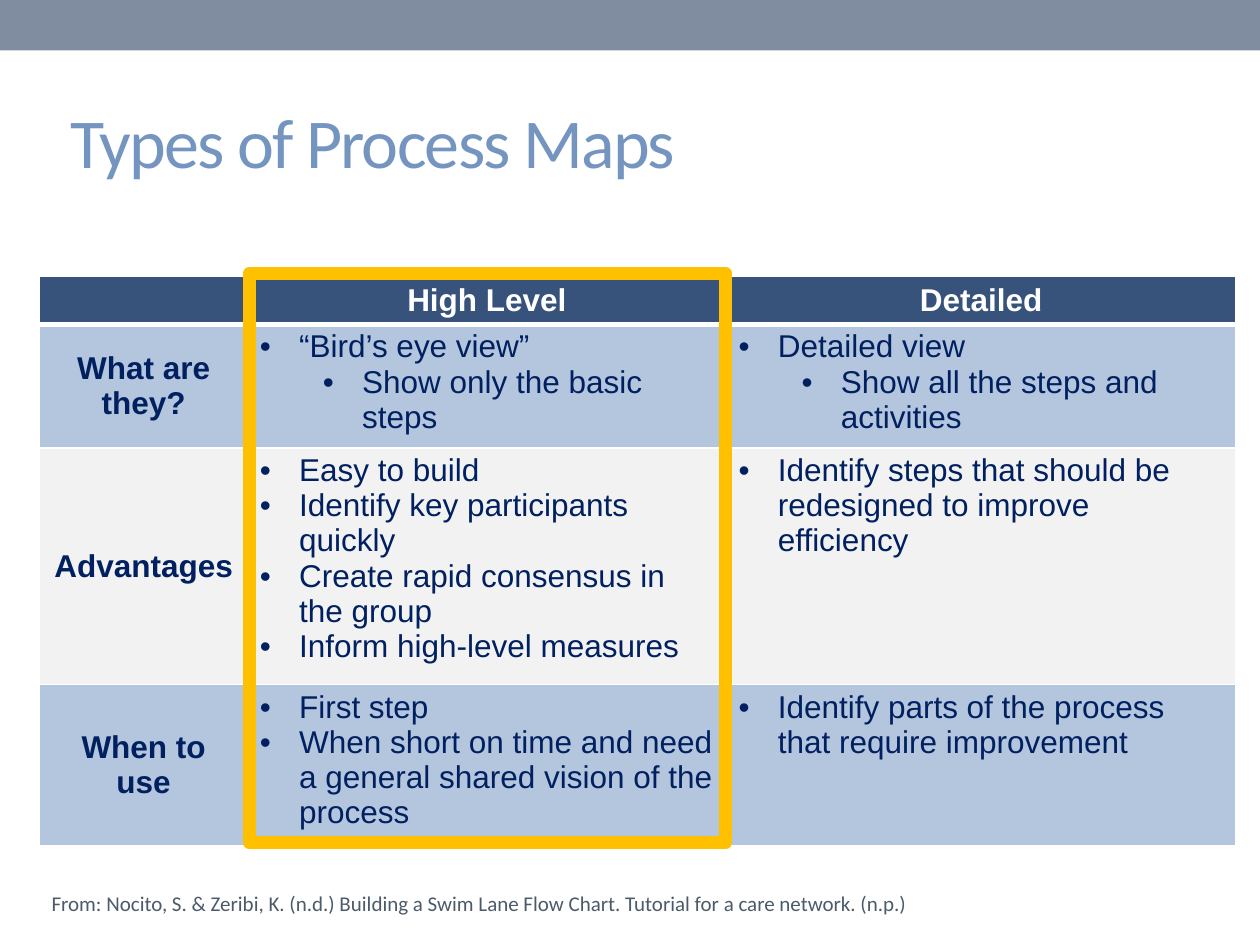
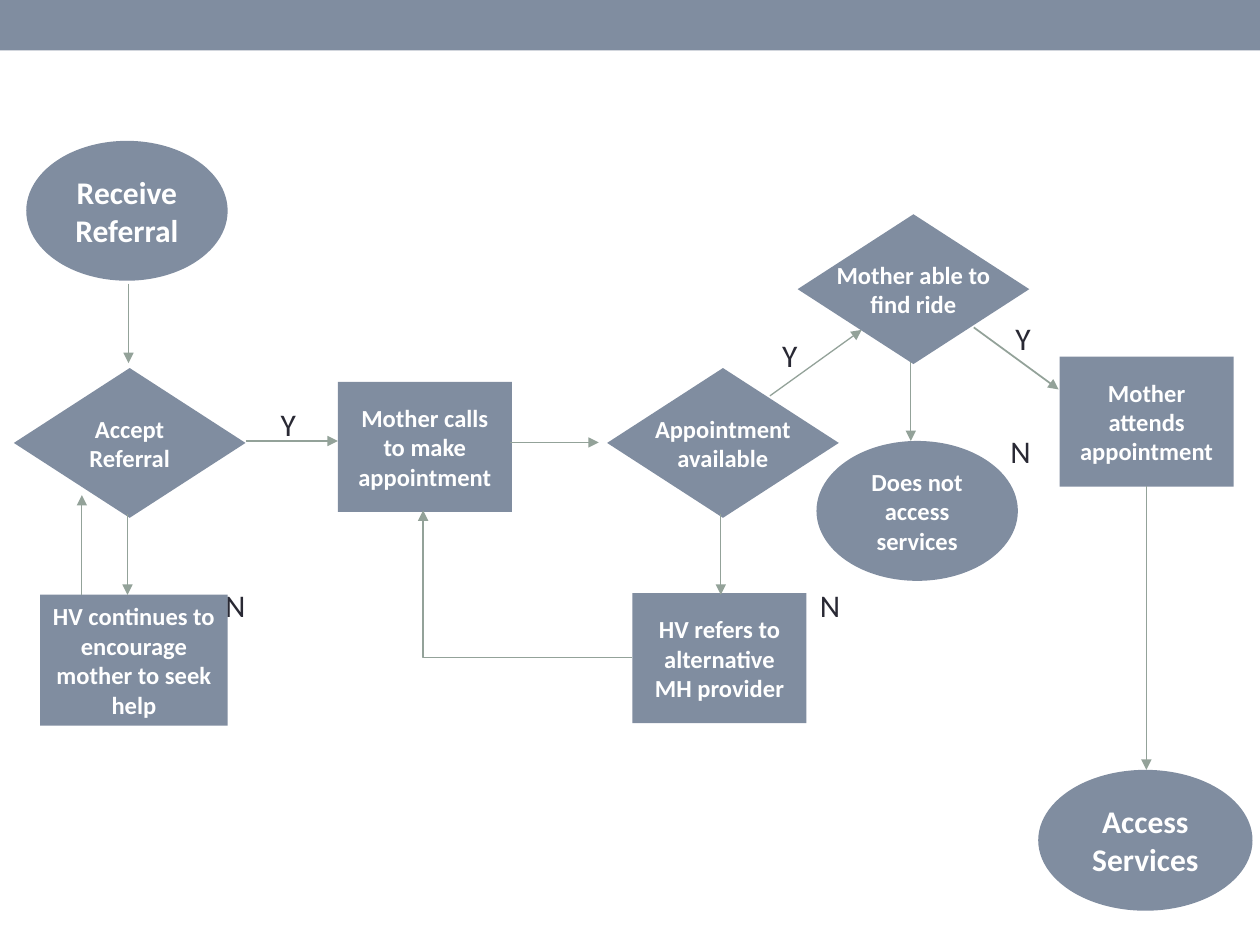
from dataclasses import dataclass

from lxml import etree
from pptx import Presentation
from pptx import util as u
from pptx.dml.color import RGBColor
from pptx.enum import shapes, text
from pptx.oxml import ns

# Shared style
SLATE, TITLE_BLUE, NAVY = "808DA0", "7595C1", "002060"
HEADER_BLUE, PALE_BLUE, PALE_GREY = "37537B", "B4C5DE", "F2F2F2"
WHITE, GOLD, ARROW_GREY, INK, CITATION_GREY = "FFFFFF", "FFC000", "93A299", "292934", "4C5A6A"
HEADING_FONT, TABLE_FONT = "Calibri", "Arial"
SLIDE_WIDTH, SLIDE_HEIGHT = 25.4, 19.05

RECTANGLE = shapes.MSO_SHAPE.RECTANGLE
OVAL = shapes.MSO_SHAPE.OVAL
DIAMOND = shapes.MSO_SHAPE.DIAMOND
SIZES = {RECTANGLE: (3.51, 2.62), OVAL: (4.06, 2.82), DIAMOND: (4.67, 3.02)}


@dataclass
class Style:
    size: float
    color: str
    font: str = HEADING_FONT
    bold: bool = False
    spacing: int = 0


@dataclass
class Node:
    kind: shapes.MSO_SHAPE
    left: float
    top: float
    words: str
    size: int = 14
    extent: tuple | None = None
    tight: bool = False


@dataclass
class Arrow:
    start: tuple
    end: tuple
    weight: float = 0.75
    bent: bool = False


@dataclass
class Label:
    words: str
    left: float
    top: float


@dataclass
class Row:
    heading: str
    high_level: list
    detailed: list
    height: float
    fill: str


def rgb(color: str) -> RGBColor:
    return RGBColor.from_string(color)


def lengths(*values: float) -> list:
    return [u.Cm(value) for value in values]


def add_run(paragraph, words: str, style: Style) -> None:
    run = paragraph.add_run()
    run.text = words
    run.font.size = u.Pt(style.size)
    run.font.name = style.font
    run.font.bold = style.bold
    run.font.color.rgb = rgb(style.color)
    if style.spacing:
        run.font._element.set("spc", str(style.spacing))


def add_text(slide, box: tuple, words: str, style: Style,
             anchor=text.MSO_ANCHOR.TOP) -> None:
    frame = slide.shapes.add_textbox(*lengths(*box)).text_frame
    frame.word_wrap = True
    frame.vertical_anchor = anchor
    add_run(frame.paragraphs[0], words, style)


def add_box(slide, kind, box: tuple, fill: str | None = None):
    shape = slide.shapes.add_shape(kind, *lengths(*box))
    shape.shadow.inherit = False
    shape.line.fill.background()
    if fill:
        shape.fill.solid()
        shape.fill.fore_color.rgb = rgb(fill)
    else:
        shape.fill.background()
    return shape


def add_slide(presentation):
    """Add a blank slide with the band across the top."""
    slide = presentation.slides.add_slide(presentation.slide_layouts[6])
    add_box(slide, RECTANGLE, (0, 0, SLIDE_WIDTH, 1.02), SLATE)
    return slide


def add_node(slide, node: Node) -> None:
    extent = node.extent or SIZES[node.kind]
    shape = add_box(slide, node.kind, (node.left, node.top, *extent), SLATE)
    frame = shape.text_frame
    frame.word_wrap = not node.tight
    frame.vertical_anchor = text.MSO_ANCHOR.MIDDLE
    if node.tight:
        frame.margin_left = frame.margin_right = frame.margin_top = frame.margin_bottom = 0
    for index, line in enumerate(node.words.split("\n")):
        paragraph = frame.add_paragraph() if index else frame.paragraphs[0]
        paragraph.alignment = text.PP_ALIGN.CENTER
        add_run(paragraph, line, Style(node.size, WHITE, bold=True))


def add_arrow(slide, arrow: Arrow) -> None:
    kind = shapes.MSO_CONNECTOR.ELBOW if arrow.bent else shapes.MSO_CONNECTOR.STRAIGHT
    # A bent arrow is laid out from its end and then turned half round
    first, last = (arrow.end, arrow.start) if arrow.bent else (arrow.start, arrow.end)
    connector = slide.shapes.add_connector(kind, *lengths(*first, *last))
    connector.line.color.rgb = rgb(ARROW_GREY)
    connector.line.width = u.Pt(arrow.weight)
    properties = connector._element.spPr
    if arrow.bent:
        properties.find(ns.qn("a:xfrm")).set("rot", "10800000")
        properties.find(ns.qn("a:prstGeom")).set("prst", "bentConnector2")
    line = properties.find(ns.qn("a:ln"))
    etree.SubElement(line, ns.qn("a:tailEnd")).set("type", "triangle")
    etree.SubElement(properties, ns.qn("a:effectLst"))


# Table parts
def set_borders(cell, bottom_weight: float) -> None:
    properties = cell._tc.get_or_add_tcPr()
    for index, side in enumerate(("lnL", "lnR", "lnT", "lnB")):
        weight = bottom_weight if side == "lnB" else 1
        line = etree.Element(ns.qn(f"a:{side}"), w=str(u.Pt(weight)))
        fill = etree.SubElement(line, ns.qn("a:solidFill"))
        etree.SubElement(fill, ns.qn("a:srgbClr")).set("val", WHITE)
        properties.insert(index, line)


def style_cell(cell, fill: str, bottom_weight: float = 1) -> None:
    cell.margin_left = cell.margin_right = u.Cm(0.25)
    cell.margin_top = cell.margin_bottom = u.Cm(0.1)
    cell.fill.solid()
    cell.fill.fore_color.rgb = rgb(fill)
    set_borders(cell, bottom_weight)


def write_heading(cell, words: str, color: str) -> None:
    cell.vertical_anchor = text.MSO_ANCHOR.MIDDLE
    paragraph = cell.text_frame.paragraphs[0]
    paragraph.alignment = text.PP_ALIGN.CENTER
    if words:
        add_run(paragraph, words, Style(18, color, TABLE_FONT, True))


def write_bullets(cell, bullets: list) -> None:
    """Write (level, words) pairs as bulleted paragraphs."""
    for index, (level, words) in enumerate(bullets):
        frame = cell.text_frame
        paragraph = frame.add_paragraph() if index else frame.paragraphs[0]
        paragraph.level = level
        properties = paragraph._p.get_or_add_pPr()
        properties.set("marL", str(u.Cm(0.79 + 1.27 * level)))
        properties.set("indent", str(u.Cm(-0.79)))
        etree.SubElement(properties, ns.qn("a:buFont")).set("typeface", TABLE_FONT)
        etree.SubElement(properties, ns.qn("a:buChar")).set("char", "•")
        add_run(paragraph, words, Style(18, NAVY, TABLE_FONT))


HEADINGS = ["", "High Level", "Detailed"]
COLUMN_WIDTHS = [4.19, 9.65, 10.28]
HEADER_HEIGHT = 0.97
ROWS = [
    Row("What are they?",
        [(0, "“Bird’s eye view”"), (1, "Show only the basic steps")],
        [(0, "Detailed view"), (1, "Show all the steps and activities")],
        2.39, PALE_BLUE),
    Row("Advantages",
        [(0, "Easy to build"), (0, "Identify key participants quickly"),
         (0, "Create rapid consensus in the group"), (0, "Inform high-level measures")],
        [(0, "Identify steps that should be redesigned to improve efficiency")],
        3.25, PALE_GREY),
    Row("When to use",
        [(0, "First step"),
         (0, "When short on time and need a general shared vision of the process")],
        [(0, "Identify parts of the process that require improvement")],
        2.49, PALE_BLUE),
]


def add_comparison_table(slide) -> None:
    height = HEADER_HEIGHT + sum(row.height for row in ROWS)
    box = lengths(0.8, 5.57, sum(COLUMN_WIDTHS), height)
    table = slide.shapes.add_table(len(ROWS) + 1, len(HEADINGS), *box).table
    table.horz_banding = False
    for column, width in zip(table.columns, COLUMN_WIDTHS):
        column.width = u.Cm(width)
    table.rows[0].height = u.Cm(HEADER_HEIGHT)
    for index, heading in enumerate(HEADINGS):
        style_cell(table.cell(0, index), HEADER_BLUE, 3)
        write_heading(table.cell(0, index), heading, WHITE)
    for index, row in enumerate(ROWS, 1):
        table.rows[index].height = u.Cm(row.height)
        heading, high_level, detailed = table.rows[index].cells
        for cell in (heading, high_level, detailed):
            style_cell(cell, row.fill)
        write_heading(heading, row.heading, NAVY)
        write_bullets(high_level, row.high_level)
        write_bullets(detailed, row.detailed)


def build_types_slide(presentation) -> None:
    slide = add_slide(presentation)
    add_text(slide, (1.17, 2.24, 21.18, 1.17), "Types of Process Maps",
             Style(40, TITLE_BLUE, spacing=-100), text.MSO_ANCHOR.MIDDLE)
    add_comparison_table(slide)
    # Frame around the High Level column
    frame = add_box(slide, RECTANGLE, (5.03, 5.51, 9.6, 11.48))
    frame.line.color.rgb = rgb(GOLD)
    frame.line.width = u.Pt(7.25)
    add_text(slide, (0.79, 17.83, 21.95, 0.76),
             "From: Nocito, S. & Zeribi, K. (n.d.) Building a Swim Lane Flow Chart. "
             "Tutorial for a care network. (n.p.)", Style(12, CITATION_GREY))


# Referral flow chart
LABELS = [
    Label("Y", 5.41, 8.05), Label("Y", 15.52, 6.65), Label("Y", 20.22, 6.3),
    Label("N", 4.29, 11.68), Label("N", 16.28, 11.68), Label("N", 20.12, 8.59),
]
NODES = [
    Node(OVAL, 0.53, 2.84, "Receive Referral", 18),
    Node(OVAL, 20.93, 15.52, "Access Services", 18, (4.32, 2.84)),
    Node(DIAMOND, 0.28, 7.42, "Accept Referral"),
    Node(RECTANGLE, 0.81, 11.99, "HV continues to encourage mother to seek help",
         extent=(3.78, 2.64)),
    Node(RECTANGLE, 6.81, 7.7, "Mother calls to make appointment"),
    Node(DIAMOND, 12.24, 7.42, "Appointment\navailable", tight=True),
    Node(RECTANGLE, 12.75, 11.96, "HV refers to alternative MH provider"),
    Node(DIAMOND, 16.08, 4.32, "Mother able to\nfind ride", tight=True),
    Node(OVAL, 16.46, 8.89, "Does not access services"),
    Node(RECTANGLE, 21.36, 7.19, "Mother attends appointment"),
]
ARROWS = [
    Arrow((2.59, 5.72), (2.59, 7.32)),
    Arrow((2.57, 10.36), (2.57, 11.99)),
    Arrow((1.65, 11.99), (1.65, 9.98)),
    Arrow((4.95, 8.89), (6.81, 8.89)),
    Arrow((10.29, 8.92), (12.07, 8.92)),
    Arrow((14.53, 10.36), (14.53, 11.99)),
    Arrow((12.75, 13.26), (8.53, 10.29), bent=True),
    Arrow((15.52, 7.98), (17.37, 6.65)),
    Arrow((18.36, 7.29), (18.36, 8.89)),
    Arrow((19.63, 6.6), (21.34, 7.85), 1),
    Arrow((23.11, 9.8), (23.11, 15.52)),
]


def build_flow_slide(presentation) -> None:
    slide = add_slide(presentation)
    for label in LABELS:
        add_text(slide, (label.left, label.top, 1.78, 1.02), label.words, Style(18, INK))
    for node in NODES:
        add_node(slide, node)
    for arrow in ARROWS:
        add_arrow(slide, arrow)


def main() -> None:
    presentation = Presentation()
    presentation.slide_width, presentation.slide_height = lengths(SLIDE_WIDTH, SLIDE_HEIGHT)
    build_types_slide(presentation)
    build_flow_slide(presentation)
    presentation.save("out.pptx")


if __name__ == "__main__":
    main()
